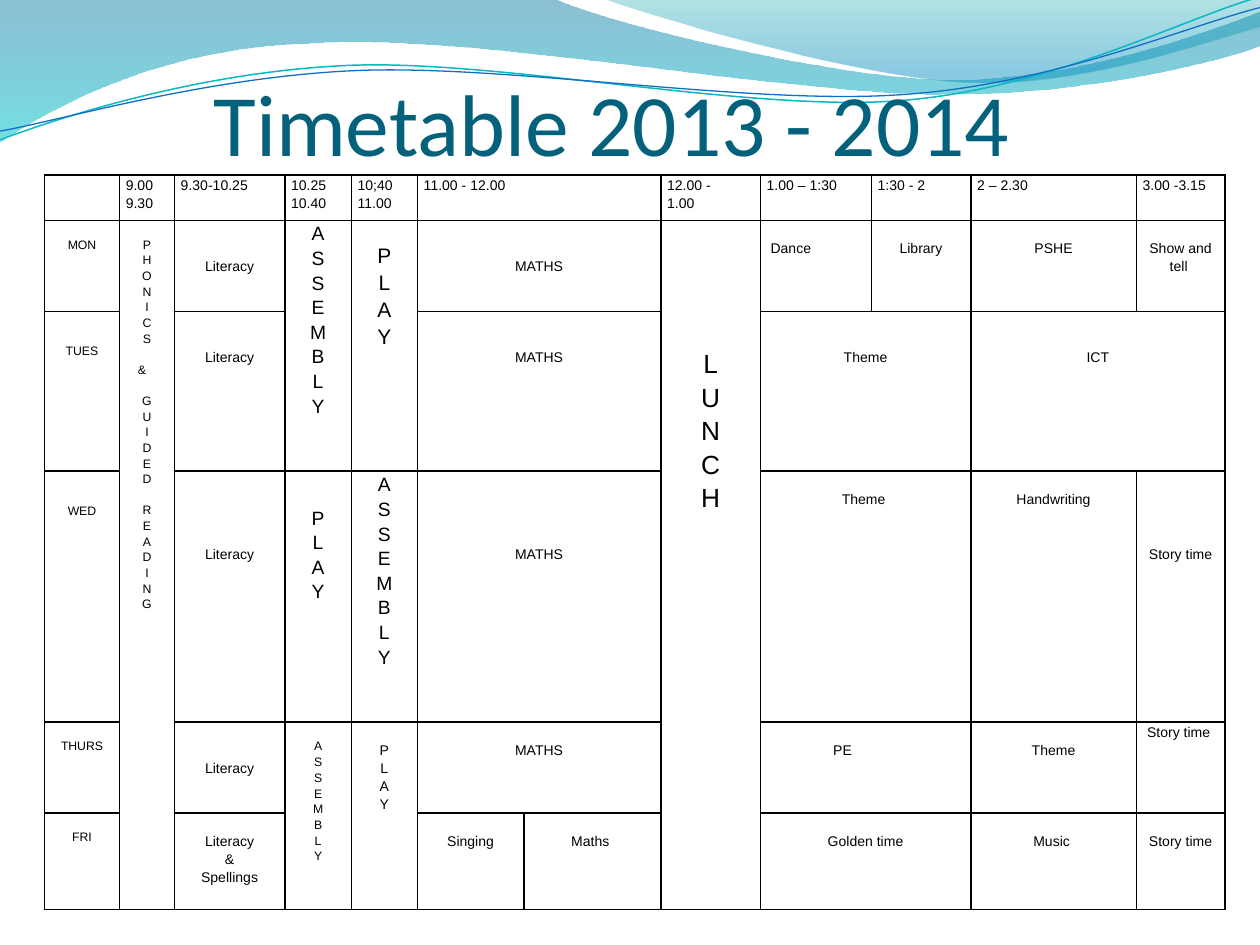
import dataclasses

import lxml.etree
import pptx
import pptx.dml.color
import pptx.enum.text
import pptx.oxml.ns
import pptx.util

Pt = pptx.util.Pt
Align = pptx.enum.text.PP_ALIGN


@dataclasses.dataclass(frozen=True)
class Theme:
    """Colours, fonts and type sizes."""
    title_font: str = "Calibri"
    table_font: str = "Arial"
    title_color: str = "04617B"
    ink: str = "000000"
    teal_line: str = "0AB8BF"
    blue_line: str = "0F6FC6"
    wide_wave: tuple = ((0, "0074A1", 45), (1, "00C6CF", 55))
    right_wave: tuple = ((0, "00A1A9", 30), (0.8, "008BBF", 45))
    title: int = 50
    lunch: int = 15
    play: int = 12
    tall: int = 11
    body: int = 8
    small: int = 7


THEME = Theme()


@dataclasses.dataclass(frozen=True)
class Entry:
    """One timetable cell, with its lead above the text and its indents."""
    row: int
    column: int
    text: str
    lead: float = 10.3
    size: int = THEME.body
    align: Align = Align.CENTER
    indent: float = 0
    right_indent: float = 0


COLUMNS = [42.9, 31.4, 63.1, 38, 37.8, 60.8, 78.3, 56.9, 63.4, 56.9, 94.6, 50.6]
ROWS = [25.8, 52, 91.4, 143.4, 52, 55.1]
MERGES = [
    (0, 5, 0, 6), (1, 1, 5, 1), (1, 3, 2, 3), (1, 4, 2, 4), (1, 7, 5, 7),
    (4, 3, 5, 3), (4, 4, 5, 4), (2, 10, 2, 11),
    *((row, 5, row, 6) for row in range(1, 5)),
    *((row, 8, row, 9) for row in range(2, 6)),
]
TIMES = {
    1: "9.00\n9.30", 2: "9.30-10.25", 3: "10.25\n10.40", 4: "10;40 11.00",
    5: "11.00 - 12.00", 7: "12.00 -\n1.00", 8: "1.00 – 1:30",
    9: "1:30 - 2", 10: "2 – 2.30", 11: "3.00 -3.15",
}
DAYS = {"MON": 9, "TUES": 18, "WED": 17.7, "THURS": 9, "FRI": 9}
READING = ["PHONICS", "&", "GUIDED", "READING"]
LITERACY_LEADS = [20.7, 20.7, 41.6, 20.7]
MATHS_LEADS = [20.7, 20.7, 41.6, 10.3]


def stacked(word):
    """Return a word with one letter to a line."""
    return "\n".join(word)


ENTRIES = [
    *(Entry(0, column, text, 0, align=Align.LEFT) for column, text in TIMES.items()),
    *(Entry(row, 0, day, lead, THEME.small)
      for row, (day, lead) in enumerate(DAYS.items(), 1)),
    *(Entry(row, 2, "Literacy", lead) for row, lead in enumerate(LITERACY_LEADS, 1)),
    *(Entry(row, 5, "MATHS", lead) for row, lead in enumerate(MATHS_LEADS, 1)),
    Entry(1, 1, stacked("".join(READING)), 9, THEME.small, indent=5.65, right_indent=5.65),
    Entry(1, 3, stacked("ASSEMBLY"), 0, THEME.tall),
    Entry(1, 4, stacked("PLAY"), 11.6, THEME.play),
    Entry(1, 7, stacked("LUNCH"), 71.6, THEME.lunch),
    Entry(1, 8, "Dance", align=Align.LEFT, indent=2.2),
    Entry(1, 9, "Library"),
    Entry(1, 10, "PSHE"),
    Entry(1, 11, "Show and tell "),
    Entry(2, 8, "Theme", 20.7),
    Entry(2, 10, "ICT", 20.7),
    Entry(3, 3, stacked("PLAY"), 19.1, THEME.tall),
    Entry(3, 4, stacked("ASSEMBLY"), 0, THEME.tall),
    Entry(3, 8, "Theme "),
    Entry(3, 10, "Handwriting"),
    Entry(3, 11, "Story time", 41.6),
    Entry(4, 3, stacked("ASSEMBLY"), 9, THEME.small),
    Entry(4, 4, stacked("PLAY")),
    Entry(4, 8, "PE", align=Align.LEFT, indent=38),
    Entry(4, 10, "Theme"),
    Entry(4, 11, "Story time ", 0),
    Entry(5, 2, "Literacy\n&\nSpellings"),
    Entry(5, 5, "Singing"),
    Entry(5, 6, "Maths "),
    Entry(5, 8, "Golden time"),
    Entry(5, 10, "Music "),
    Entry(5, 11, "Story time"),
]

WIDE_WAVE = [
    (0, 0), (316.8, -0.7), (342.7, 12.2, 478.1, 45.4, 545.8, 45.4),
    (614.2, 45.4, 689.8, 18.7, 720, 6.5), (720.7, 25.9),
    (707.8, 31.7, 626.4, 54.7, 537.1, 54), (447.8, 54, 275, 20.2, 185, 24.5),
    (92.9, 25.9, 33.1, 59.8, -0.7, 81.4),
]
RIGHT_WAVE = [
    (344.9, -0.7), (366.5, 7.9, 491, 44.6, 553.7, 46.8),
    (616.3, 49.7, 691.9, 23, 720, 15.1), (720, 0),
]
TEAL_CURVE = [
    (0, 79.9), (34.6, 67, 113.8, 41, 199.4, 37.4),
    (284.4, 33.8, 427, 64.1, 513.4, 57.6), (599.8, 51.1, 675.4, 10.8, 718.6, -1.4),
]
BLUE_CURVE = [
    (0, 74.9), (33.8, 69.1, 118.1, 43.9, 203.8, 40.3),
    (290.2, 36.7, 429.8, 60.5, 516.2, 54), (601.9, 48.2, 677.5, 15.1, 720, 4.3),
]


def rgb(value):
    """Return a colour from its hex value."""
    return pptx.dml.color.RGBColor.from_string(value)


def add_node(parent, tag, **attributes):
    """Append a drawing element to a parent."""
    return lxml.etree.SubElement(parent, pptx.oxml.ns.qn(tag), attributes)


def add_outline(page, box, segments, closed):
    """Add a freeform of straight and cubic segments relative to the box."""
    points = [
        (Pt(box[0] + x), Pt(box[1] + y))
        for segment in segments for x, y in zip(segment[::2], segment[1::2])]
    builder = page.shapes.build_freeform(*points[0])
    builder.add_line_segments(points[1:], close=closed)
    shape = builder.convert_to_shape()
    shape.shadow.inherit = False
    lines = iter(list(shape.element.iter(pptx.oxml.ns.qn("a:lnTo"))))
    for segment in segments[1:]:
        first = next(lines)
        if len(segment) == 6:
            curve = lxml.etree.Element(pptx.oxml.ns.qn("a:cubicBezTo"))
            first.addprevious(curve)
            for line in (first, next(lines), next(lines)):
                curve.append(line[0])
                line.getparent().remove(line)
    return shape


def add_waves(page, box):
    """Draw the two gradient waves and the two curves of the header."""
    for segments, stops in ((WIDE_WAVE, THEME.wide_wave), (RIGHT_WAVE, THEME.right_wave)):
        wave = add_outline(page, box, segments, True)
        wave.line.fill.background()
        wave.fill.gradient()
        wave.fill.gradient_angle = 270
        for stop, (position, color, _) in zip(wave.fill.gradient_stops, stops):
            stop.position = position
            stop.color.rgb = rgb(color)
        for node, (_, _, opacity) in zip(
                wave.element.spPr.iter(pptx.oxml.ns.qn("a:srgbClr")), stops):
            add_node(node, "a:alpha", val=str(opacity * 1000))
    for segments, color, width in ((TEAL_CURVE, THEME.teal_line, 0.85),
                                   (BLUE_CURVE, THEME.blue_line, 0.75)):
        curve = add_outline(page, box, segments, False)
        curve.fill.background()
        curve.line.color.rgb = rgb(color)
        curve.line.width = Pt(width)


def style_spans(para, font, size, color):
    """Format every run of a paragraph."""
    for span in para.runs:
        span.font.name = font
        span.font.size = Pt(size)
        span.font.color.rgb = rgb(color)


def place_title(page, box):
    """Place and format the title in front of the waves."""
    title = page.shapes.title
    page.shapes.element.append(title.element)
    title.left, title.top, title.width, title.height = map(Pt, box)
    frame = title.text_frame
    frame.text = "Timetable 2013 - 2014"
    frame.word_wrap = True
    frame.auto_size = pptx.enum.text.MSO_AUTO_SIZE.NONE
    frame.vertical_anchor = pptx.enum.text.MSO_ANCHOR.BOTTOM
    frame.margin_left = frame.margin_right = frame.margin_bottom = Pt(0)
    frame.margin_top = Pt(3.6)
    frame.paragraphs[0].alignment = Align.LEFT
    style_spans(frame.paragraphs[0], THEME.title_font, THEME.title, THEME.title_color)


def format_cell(cell):
    """Give a cell its margins, borders and clear fill."""
    cell.margin_left = cell.margin_right = Pt(3.6)
    cell.margin_top = cell.margin_bottom = Pt(0)
    properties = cell._tc.get_or_add_tcPr()
    for side in "LRTB":
        border = add_node(properties, f"a:ln{side}", w=str(Pt(1)))
        add_node(add_node(border, "a:solidFill"), "a:srgbClr", val=THEME.ink)
    cell.fill.background()


def fill_cell(cell, entry):
    """Write an entry into its cell."""
    cell.margin_top = Pt(entry.lead)
    cell.text_frame.text = entry.text
    for para in cell.text_frame.paragraphs:
        para.alignment = entry.align
        para.line_spacing = 1.15
        properties = para._p.get_or_add_pPr()
        if entry.indent and para.text != "&":
            properties.set("marL", str(Pt(entry.indent)))
        if entry.right_indent:
            properties.set("marR", str(Pt(entry.right_indent)))
        style_spans(para, THEME.table_font, entry.size, THEME.ink)


def add_timetable(page, box):
    """Build the timetable with its merged cells."""
    table = page.shapes.add_table(len(ROWS), len(COLUMNS), *map(Pt, box)).table
    table.first_row = table.horz_banding = False
    for column, width in zip(table.columns, COLUMNS):
        column.width = Pt(width)
    for row, height in zip(table.rows, ROWS):
        row.height = Pt(height)
    for cell in table.iter_cells():
        format_cell(cell)
    for top, left, bottom, right in MERGES:
        table.cell(top, left).merge(table.cell(bottom, right))
    for entry in ENTRIES:
        fill_cell(table.cell(entry.row, entry.column), entry)
    letters = table.cell(1, 1).text_frame.paragraphs
    start = 0
    for word in READING[:-1]:
        start += len(word)
        letters[start].space_before = Pt(8.8)


def main():
    """Build and save the timetable slide."""
    deck = pptx.Presentation()
    deck.slide_width, deck.slide_height = Pt(720), Pt(540)
    page = deck.slides.add_slide(deck.slide_layouts[5])
    add_waves(page, (0, 0, 720, 82))
    place_title(page, (122, 9.4, 482.4, 90))
    add_timetable(page, (25.4, 100.1, sum(COLUMNS), sum(ROWS)))
    deck.save("out.pptx")


if __name__ == "__main__":
    main()
